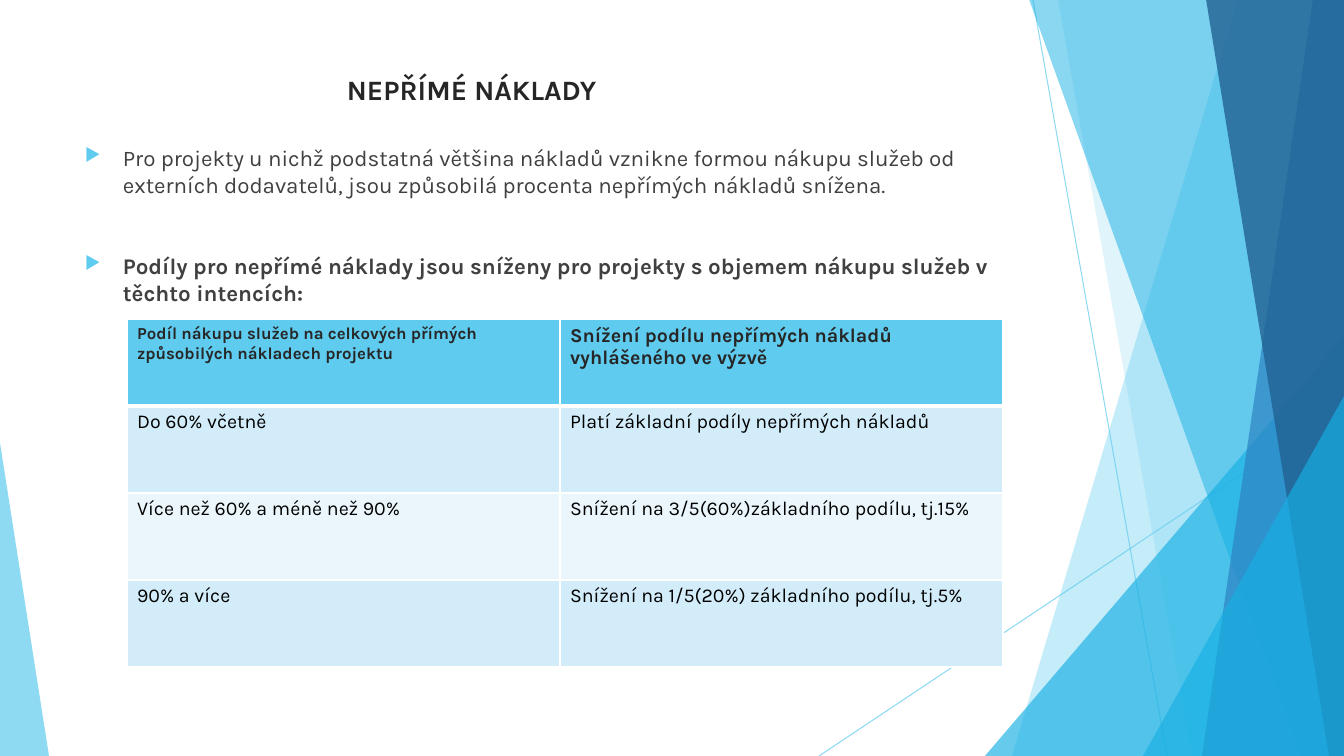
from lxml.etree import SubElement
from pptx import Presentation
from pptx.dml.color import RGBColor
from pptx.enum.shapes import MSO_CONNECTOR, MSO_SHAPE
from pptx.enum.text import MSO_ANCHOR
from pptx.oxml.ns import qn
from pptx.util import Pt

WIDTH, HEIGHT = 1344, 756
EMU_PER_PX = 914400 / 100.8
COLORS = {
    "sky": "5FCBEF", "azure": "17B0E4", "blue": "2E83C3", "navy": "226292",
    "heading": "262626", "body": "404040", "black": "000000", "white": "FFFFFF",
    "band_dark": "D2ECF9", "band_light": "EAF6FC",
}


def px(length):
    return round(length * EMU_PER_PX)


def rgb(color):
    return RGBColor.from_string(COLORS[color])


def write(paragraph, text, *, size, color, bold=False, font="Karla"):
    run = paragraph.add_run()
    run.text = text
    run.font.name = font
    run.font.size = Pt(size)
    run.font.bold = bold
    run.font.color.rgb = rgb(color)


class FacetSlide:
    def __init__(self, presentation):
        self.slide = presentation.slides.add_slide(presentation.slide_layouts[6])
        self.shapes = self.slide.shapes

    def set_opacity(self, shape, percent):
        for color in shape.element.spPr.iter(qn("a:srgbClr")):
            SubElement(color, qn("a:alpha"), val=str(percent * 1000))

    def paint(self, shape, color, opacity):
        shape.shadow.inherit = False
        shape.fill.solid()
        shape.fill.fore_color.rgb = rgb(color)
        shape.line.fill.background()
        self.set_opacity(shape, opacity)

    def ray(self, x1, y1, x2, y2):
        line = self.shapes.add_connector(
            MSO_CONNECTOR.STRAIGHT, px(x1), px(y1), px(x2), px(y2))
        line.line.color.rgb = rgb("sky")
        line.line.width = Pt(0.75)
        self.set_opacity(line, 70)
        SubElement(line.element.spPr, qn("a:effectLst"))

    def facet(self, top_x, bottom_x, color, opacity):
        """Panel from a slanted left side to the right edge of the slide."""
        builder = self.shapes.build_freeform(top_x, -1, scale=EMU_PER_PX)
        builder.add_line_segments(
            [(WIDTH, -1), (WIDTH, HEIGHT), (bottom_x, HEIGHT)], close=True)
        self.paint(builder.convert_to_shape(), color, opacity)

    def corner(self, x, width, height, apex, color, opacity):
        """Triangle standing on the bottom edge of the slide."""
        triangle = self.shapes.add_shape(
            MSO_SHAPE.ISOSCELES_TRIANGLE,
            px(x), px(HEIGHT - height), px(width), px(height))
        triangle.adjustments[0] = apex
        self.paint(triangle, color, opacity)

    def text_frame(self, x, y, width, height):
        frame = self.shapes.add_textbox(px(x), px(y), px(width), px(height)).text_frame
        frame.word_wrap = True
        frame.vertical_anchor = MSO_ANCHOR.TOP
        return frame

    def title(self, box, text, indent):
        paragraph = self.text_frame(*box).paragraphs[0]
        paragraph._p.get_or_add_pPr().set("marL", str(px(indent)))
        write(paragraph, text, size=20, color="heading", bold=True)

    def bullets(self, box, items):
        frame = self.text_frame(*box)
        for index, (text, bold, gap) in enumerate(items):
            paragraph = frame.add_paragraph() if index else frame.paragraphs[0]
            paragraph.space_before = Pt(gap)
            properties = paragraph._p.get_or_add_pPr()
            properties.set("marL", str(px(38)))
            properties.set("indent", str(px(-38)))
            bullet_color = SubElement(properties, qn("a:buClr"))
            SubElement(bullet_color, qn("a:srgbClr"), val=COLORS["sky"])
            SubElement(properties, qn("a:buSzPct"), val="80000")
            SubElement(properties, qn("a:buChar"), char="▶")
            write(paragraph, text, size=16, color="body", bold=bold)

    def borders(self, cell, top, bottom):
        properties = cell._tc.get_or_add_tcPr()
        for side, width in (("L", 1), ("R", 1), ("T", top), ("B", bottom)):
            line = SubElement(properties, qn(f"a:ln{side}"), w=str(Pt(width)))
            fill = SubElement(line, qn("a:solidFill"))
            SubElement(fill, qn("a:srgbClr"), val=COLORS["white"])

    def table(self, x, y, column_widths, row_height, rows, header_sizes):
        table = self.shapes.add_table(
            len(rows), len(column_widths), px(x), px(y),
            px(sum(column_widths)), px(row_height * len(rows))).table
        for column, width in zip(table.columns, column_widths):
            column.width = px(width)
        for r, texts in enumerate(rows):
            table.rows[r].height = px(row_height)
            header = r == 0
            band = "sky" if header else "band_dark" if r % 2 else "band_light"
            for c, text in enumerate(texts):
                cell = table.cell(r, c)
                self.borders(cell, top=3 if r == 1 else 1, bottom=3 if header else 1)
                cell.fill.solid()
                cell.fill.fore_color.rgb = rgb(band)
                write(cell.text_frame.paragraphs[0], text,
                      size=header_sizes[c] if header else 14,
                      color="heading" if header else "black", bold=header)


def main():
    presentation = Presentation()
    presentation.slide_width, presentation.slide_height = px(WIDTH), px(HEIGHT)
    costs = FacetSlide(presentation)

    # Faceted background, back to front
    costs.ray(1033, 0, 1167, HEIGHT)
    costs.ray(WIDTH, 406, 819, HEIGHT)
    costs.facet(1238, 1012, "sky", 36)
    costs.facet(1058, 1192, "sky", 20)
    costs.corner(985, 359, 420, 1, "azure", 66)
    costs.facet(1029, 1301, "azure", 50)
    costs.facet(1313, 1202, "blue", 70)
    costs.facet(1206, 1329, "navy", 80)
    costs.corner(1143, 201, 360, 1, "azure", 66)
    costs.corner(0, 49, 313, 0, "sky", 70)

    # Heading and rules
    costs.title((75, 68, 948, 63), "NEPŘÍMÉ NÁKLADY", indent=262)
    costs.bullets((75, 139, 948, 527), [
        ("Pro projekty u nichž podstatná většina nákladů vznikne formou nákupu "
         "služeb od externích dodavatelů, jsou způsobilá procenta nepřímých "
         "nákladů snížena.", False, 10),
        ("Podíly pro nepřímé náklady jsou sníženy pro projekty s objemem nákupu "
         "služeb v těchto intencích:", True, 39),
    ])

    # Reduction of indirect costs by share of purchased services
    costs.table(127, 319, (433, 443), 87, [
        ("Podíl nákupu služeb na celkových přímých způsobilých nákladech projektu",
         "Snížení podílu nepřímých nákladů vyhlášeného ve výzvě"),
        ("Do 60% včetně", "Platí základní podíly nepřímých nákladů"),
        ("Více než 60% a méně než 90%", "Snížení na 3/5(60%)základního podílu, tj.15%"),
        ("90% a více", "Snížení na 1/5(20%) základního podílu, tj.5%"),
    ], header_sizes=(12, 14))

    presentation.save("out.pptx")


if __name__ == "__main__":
    main()
